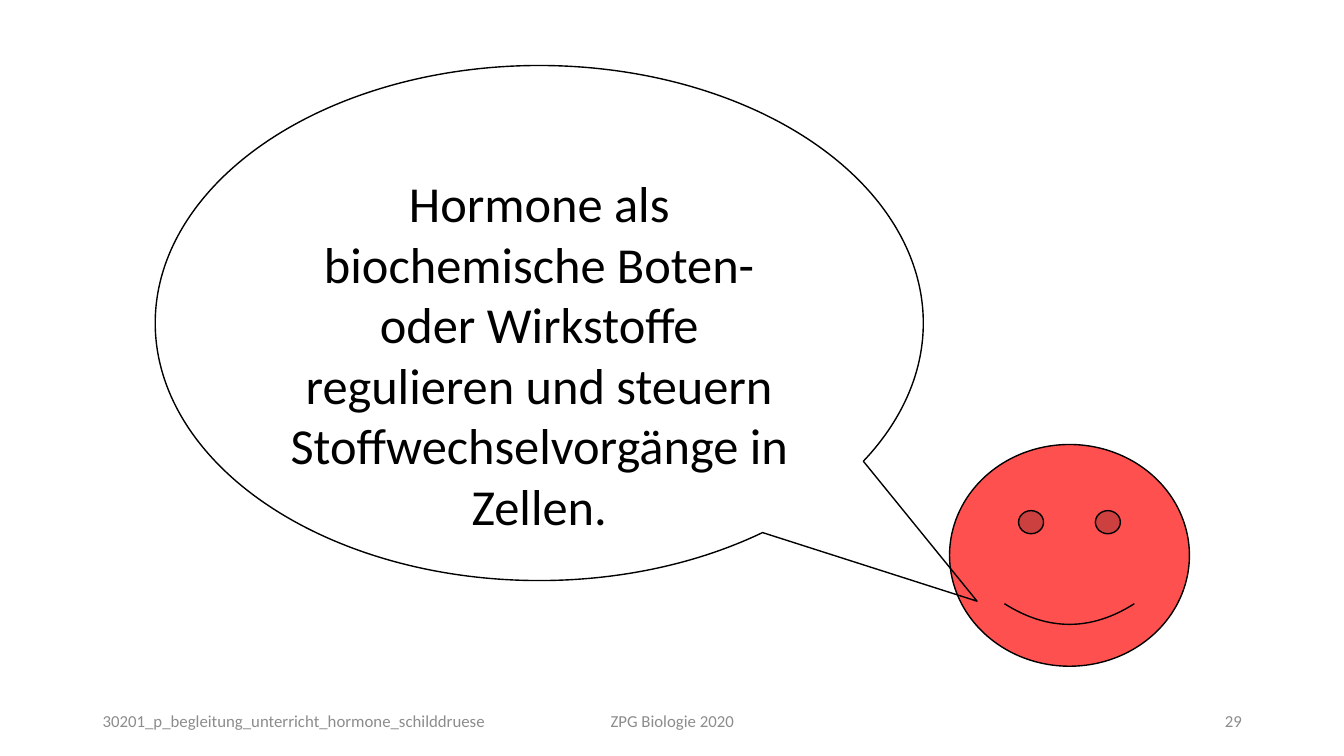
"""Build a slide with a smiley explaining hormones in a speech bubble."""
from pptx import Presentation
from pptx.dml.color import RGBColor
from pptx.enum import shapes, text
from pptx.util import Pt

STATEMENT = ("Hormone als biochemische Boten- oder Wirkstoffe regulieren "
             "und steuern Stoffwechselvorgänge in Zellen.")
ALIGN = text.PP_ALIGN
FOOTER = [
    ("30201_p_begleitung_unterricht_hormone_schilddruese", 66.24, 312.48, ALIGN.LEFT),
    ("ZPG Biologie 2020", 318.24, 324, ALIGN.CENTER),
    ("29", 678.24, 216, ALIGN.RIGHT),
]
FOOTER_TOP, FOOTER_HEIGHT = 500.4, 28.8
SMILEY = (678.24, 317.52, 171.36, 158.4)
BUBBLE = (110.88, 46.8, 548.64, 367.92)
BUBBLE_TEXT_DROP = 47.5
THEME = {
    "font": "Calibri",
    "ink": RGBColor.from_string("000000"),
    "muted": RGBColor.from_string("8C8C8C"),
    "face": RGBColor.from_string("FF5050"),
    "statement": 36,
    "footer": 12,
    "line": 1,
}


def write(shape, content, *, size, color, align, top=3.6):
    """Put one formatted, vertically centred paragraph into a shape."""
    frame = shape.text_frame
    frame.word_wrap = True
    frame.vertical_anchor = text.MSO_ANCHOR.MIDDLE
    frame.margin_top = Pt(top)
    para = frame.paragraphs[0]
    para.alignment = align
    span = para.add_run()
    span.text = content
    span.font.name = THEME["font"]
    span.font.size = Pt(size)
    span.font.color.rgb = color


def add_outlined(page, kind, bounds, adjustments, fill=None):
    """Add an outlined preset shape, filled only when a colour is given."""
    shape = page.shapes.add_shape(kind, *map(Pt, bounds))
    shape.shadow.inherit = False
    for index, value in enumerate(adjustments):
        shape.adjustments[index] = value
    if fill is None:
        shape.fill.background()
    else:
        shape.fill.solid()
        shape.fill.fore_color.rgb = fill
    shape.line.color.rgb = THEME["ink"]
    shape.line.width = Pt(THEME["line"])
    return shape


def main():
    """Create the deck and save it."""
    deck = Presentation()
    deck.slide_width, deck.slide_height = Pt(960), Pt(540)
    page = deck.slides.add_slide(deck.slide_layouts[6])
    kinds = shapes.MSO_SHAPE
    add_outlined(page, kinds.SMILEY_FACE, SMILEY, [0.05], THEME["face"])
    bubble = add_outlined(page, kinds.OVAL_CALLOUT, BUBBLE, [0.57, 0.54])
    write(bubble, STATEMENT, size=THEME["statement"], color=THEME["ink"],
          align=ALIGN.CENTER, top=BUBBLE_TEXT_DROP)
    for content, left, width, align in FOOTER:
        box = page.shapes.add_textbox(*map(Pt, (left, FOOTER_TOP, width, FOOTER_HEIGHT)))
        write(box, content, size=THEME["footer"], color=THEME["muted"], align=align)
    deck.save("out.pptx")


if __name__ == "__main__":
    main()
